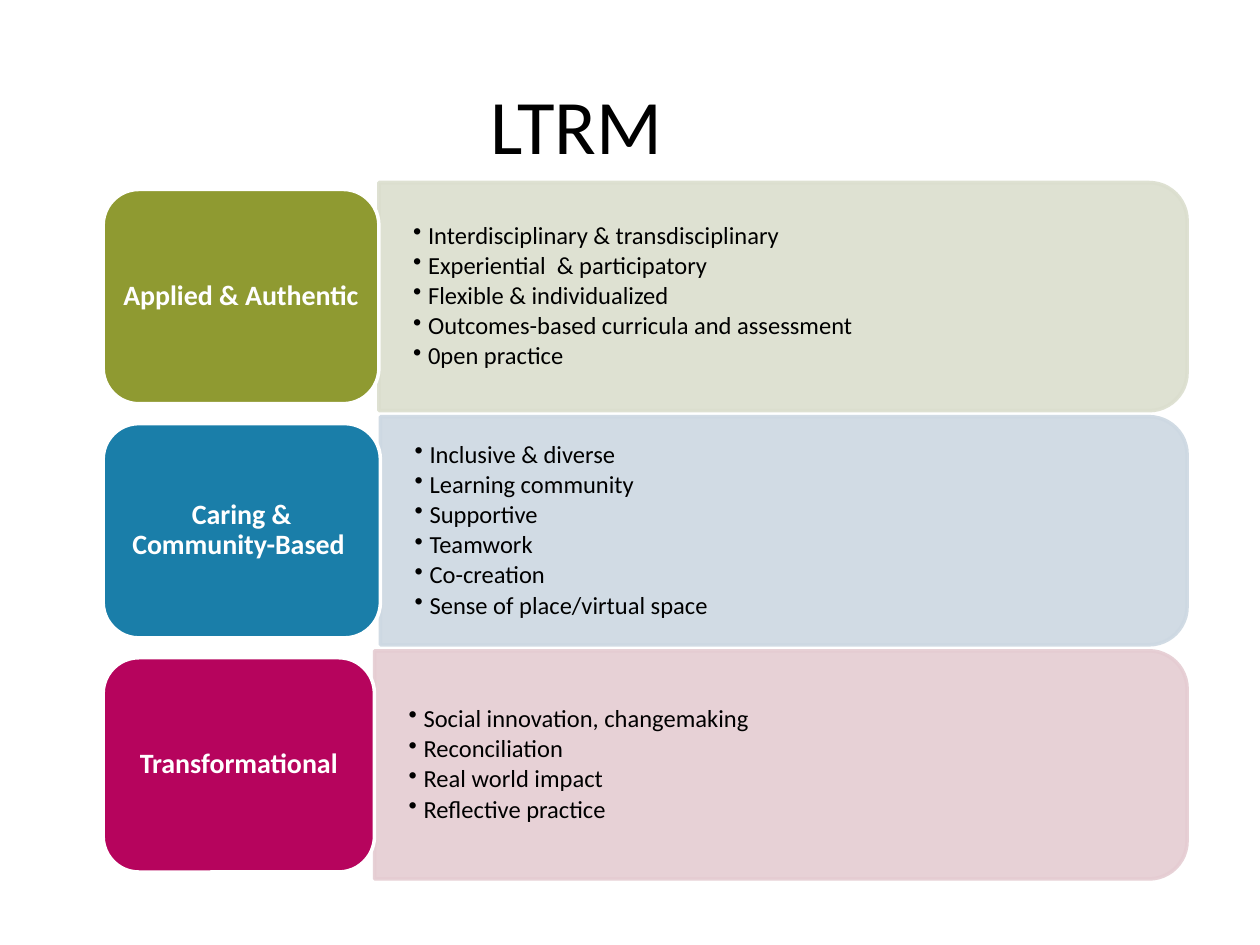
from dataclasses import dataclass

import pptx
import pptx.dml.color
import pptx.enum.shapes
import pptx.enum.text
import pptx.oxml.ns
import pptx.util
from lxml import etree

Cm = pptx.util.Cm
Pt = pptx.util.Pt
RGB = pptx.dml.color.RGBColor.from_string
SHAPE = pptx.enum.shapes.MSO_SHAPE
ANCHOR = pptx.enum.text.MSO_ANCHOR
ALIGN = pptx.enum.text.PP_ALIGN
qn = pptx.oxml.ns.qn


@dataclass(frozen=True)
class Theme:
    font: str = "Calibri"
    text: str = "000000"
    white: str = "FFFFFF"
    title_size: int = 44
    label_size: int = 16
    bullet_size: int = 14
    outline: int = 2
    panel_alpha: int = 90


# label, label width in cm, label colour, panel colour, bullets
THEMES_OF_LEARNING = [
    ("Applied & Authentic", 5.56, "8F9A31", "DBDECE",
     ["Interdisciplinary & transdisciplinary", "Experiential  & participatory",
      "Flexible & individualized", "Outcomes-based curricula and assessment",
      "0pen practice"]),
    ("Caring & Community-Based ", 5.59, "1A7EA9", "CDD8E2",
     ["Inclusive & diverse", "Learning community", "Supportive", "Teamwork",
      "Co-creation", "Sense of place/virtual space"]),
    ("Transformational", 5.47, "B6045D", "E5CCD2",
     ["Social innovation, changemaking", "Reconciliation",
      "Real world impact", "Reflective practice"]),
]

LABEL_LEFT, LABEL_HEIGHT = 2.08, 4.32
PANEL_RIGHT, PANEL_HEIGHT = 23.93, 4.6
BULLETS_RIGHT, BULLETS_HEIGHT = 23.7, 4.17
FIRST_ROW_MIDDLE, ROW_PITCH = 5.98, 4.72


def add_bullet(paragraph, hanging=0.3):
    properties = paragraph._p.get_or_add_pPr()
    properties.set("marL", str(Cm(hanging)))
    properties.set("indent", str(-Cm(hanging)))
    etree.SubElement(properties, qn("a:buChar")).set("char", "•")


def set_alpha(color_format_parent, percent):
    """Make every solid colour below the element partly transparent."""
    for color in color_format_parent.iter(qn("a:srgbClr")):
        etree.SubElement(color, qn("a:alpha")).set("val", str(percent * 1000))


def write_text(frame, lines, *, font, size, color, bold=False, align=ALIGN.LEFT,
               anchor=ANCHOR.MIDDLE, insets=(0.25, 0.13), line_spacing=1.0,
               space_after=0, bullets=False):
    """Fill a text frame; insets are (horizontal, vertical) in cm."""
    frame.word_wrap = True
    frame.vertical_anchor = anchor
    frame.margin_left = frame.margin_right = Cm(insets[0])
    frame.margin_top = frame.margin_bottom = Cm(insets[1])
    for index, line in enumerate(lines):
        paragraph = frame.add_paragraph() if index else frame.paragraphs[0]
        paragraph.alignment = align
        paragraph.line_spacing = line_spacing
        paragraph.space_after = Pt(space_after)
        if bullets:
            paragraph.level = 1
            add_bullet(paragraph)
        run = paragraph.add_run()
        run.text = line
        run.font.name = font
        run.font.size = Pt(size)
        run.font.bold = bold
        run.font.color.rgb = RGB(color)


class SlideBuilder:
    def __init__(self, slide, theme):
        self.slide = slide
        self.theme = theme

    def _shape(self, preset, left, top, width, height, fill, line):
        shape = self.slide.shapes.add_shape(
            preset, Cm(left), Cm(top), Cm(width), Cm(height))
        shape.shadow.inherit = False
        shape.fill.solid()
        shape.fill.fore_color.rgb = RGB(fill)
        shape.line.color.rgb = RGB(line)
        shape.line.width = Pt(self.theme.outline)
        return shape

    def _text_box(self, left, top, width, height, lines, **style):
        box = self.slide.shapes.add_textbox(
            Cm(left), Cm(top), Cm(width), Cm(height))
        write_text(box.text_frame, lines, font=self.theme.font,
                   color=self.theme.text, **style)

    def title(self, text):
        self._text_box(1.27, 1.37, 20.7, 3.18, [text],
                       size=self.theme.title_size, align=ALIGN.CENTER,
                       anchor=ANCHOR.TOP, insets=(0.25, 0.2))

    def panel(self, left, middle, color):
        """Band rounded at its right end: a top-rounded shape turned by 90°."""
        length = PANEL_RIGHT - left
        center = (left + PANEL_RIGHT) / 2
        band = self._shape(SHAPE.ROUND_2_SAME_RECTANGLE,
                           center - PANEL_HEIGHT / 2, middle - length / 2,
                           PANEL_HEIGHT, length, color, color)
        band.rotation = 90
        set_alpha(band._element.spPr, self.theme.panel_alpha)

    def bullets(self, left, middle, lines):
        self._text_box(left, middle - BULLETS_HEIGHT / 2,
                       BULLETS_RIGHT - left, BULLETS_HEIGHT, lines,
                       size=self.theme.bullet_size, insets=(0.69, 0.36),
                       line_spacing=0.9, space_after=2.1, bullets=True)

    def label(self, text, middle, width, color):
        block = self._shape(SHAPE.ROUNDED_RECTANGLE, LABEL_LEFT,
                            middle - LABEL_HEIGHT / 2, width, LABEL_HEIGHT,
                            color, self.theme.white)
        write_text(block.text_frame, [text], font=self.theme.font,
                   size=self.theme.label_size, color=self.theme.white,
                   bold=True, align=ALIGN.CENTER, insets=(0.17, 0.08),
                   line_spacing=0.9)


def main():
    presentation = pptx.Presentation()
    presentation.slide_width = Cm(25.4)
    presentation.slide_height = Cm(19.05)
    slide = presentation.slides.add_slide(presentation.slide_layouts[6])
    builder = SlideBuilder(slide, Theme())

    for row, (label, width, strong, pale, points) in enumerate(THEMES_OF_LEARNING):
        middle = FIRST_ROW_MIDDLE + row * ROW_PITCH
        panel_left = LABEL_LEFT + width
        builder.panel(panel_left, middle, pale)
        builder.bullets(panel_left, middle, points)
        builder.label(label, middle, width, strong)
    builder.title("LTRM")

    presentation.save("out.pptx")


if __name__ == "__main__":
    main()
